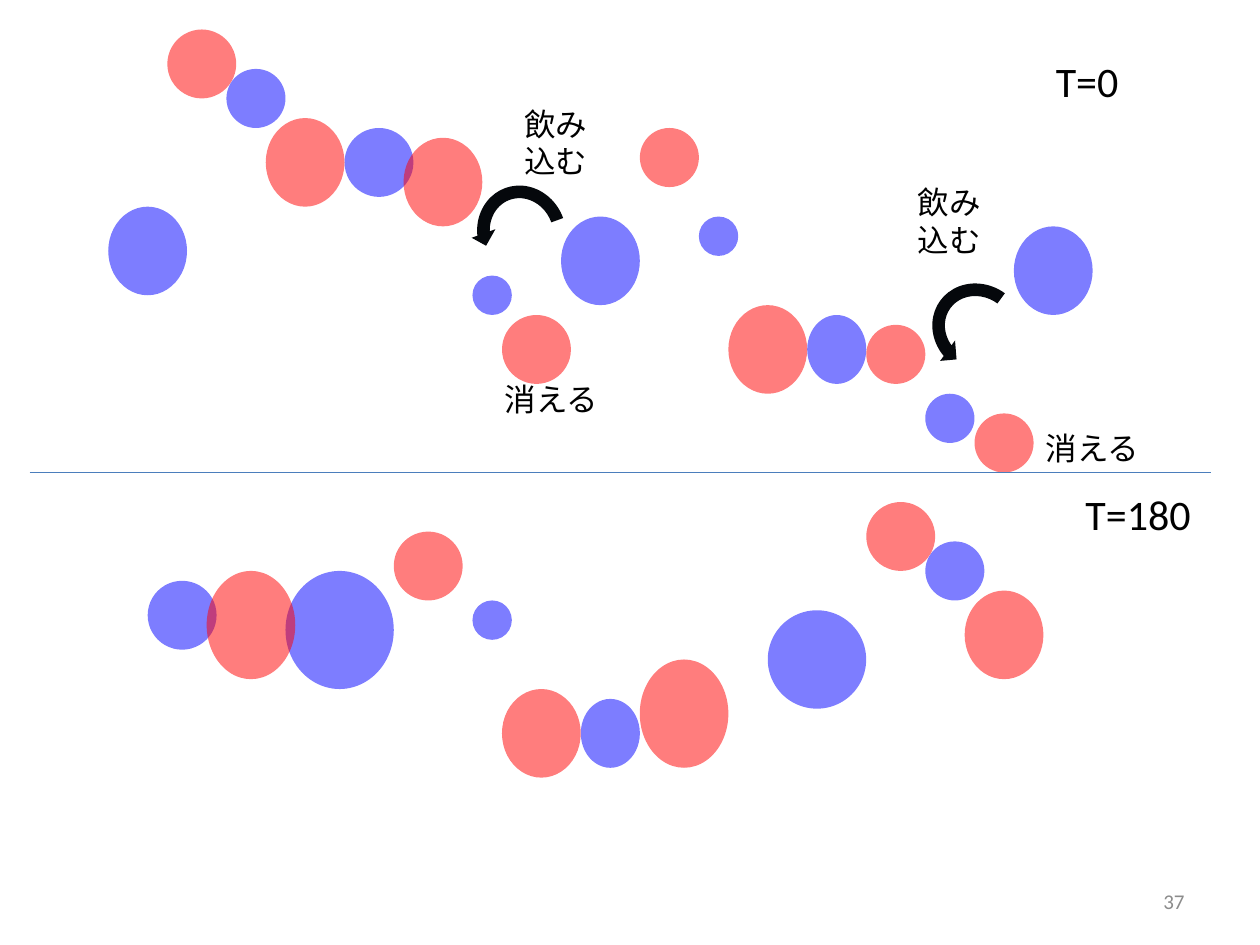
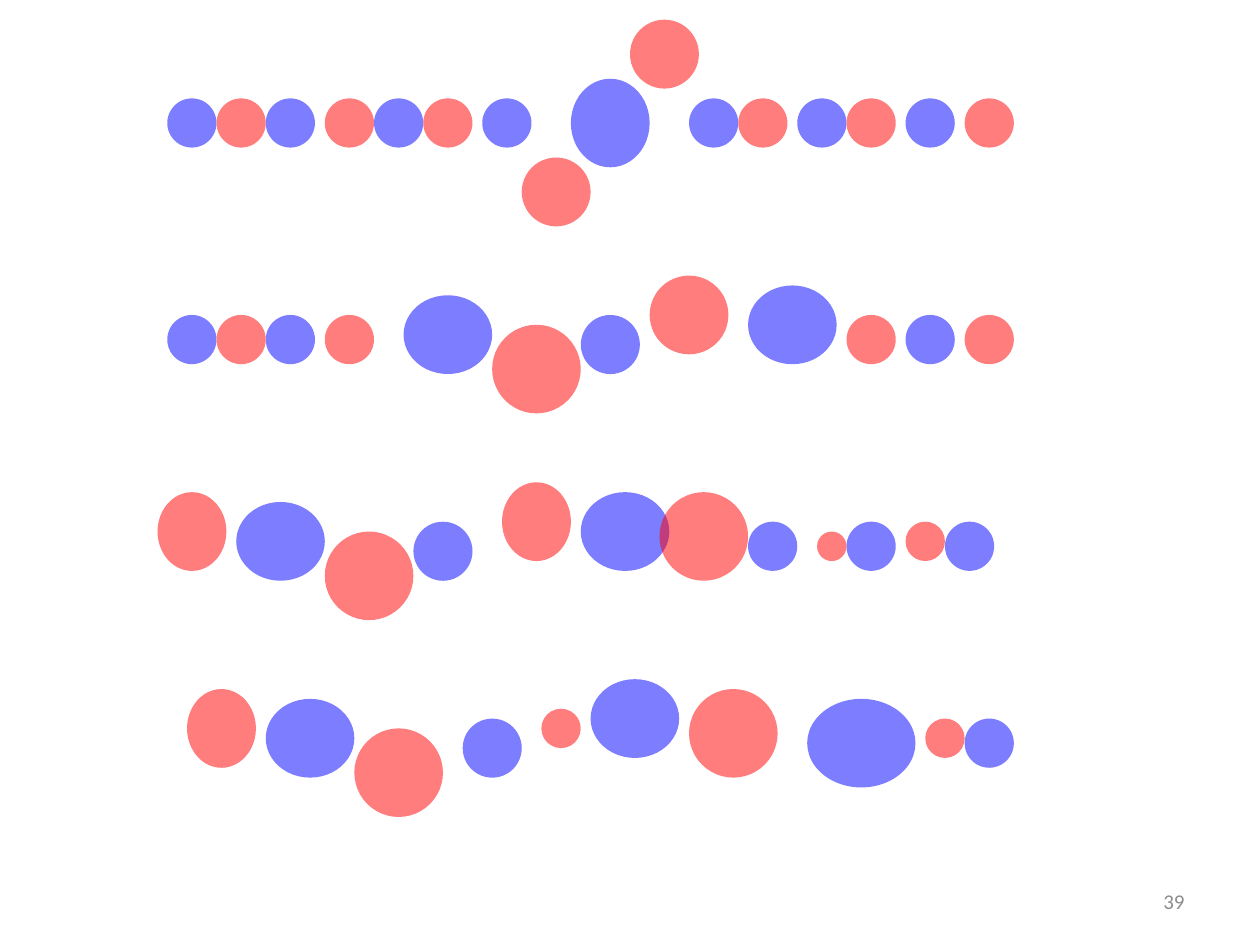
from pptx import Presentation
from pptx.dml.color import RGBColor
from pptx.enum.shapes import MSO_CONNECTOR, MSO_SHAPE
from pptx.enum.text import MSO_ANCHOR, PP_ALIGN
from pptx.oxml.ns import qn
from pptx.util import Pt
from lxml.etree import SubElement

BLUE = RGBColor(0x00, 0x00, 0xFF)
RED = RGBColor(0xFF, 0x00, 0x00)
BLACK = RGBColor(0x00, 0x00, 0x00)
ARROW_BLACK = RGBColor(0x05, 0x08, 0x0C)
DIVIDER_BLUE = RGBColor(0x4B, 0x7E, 0xBC)
NUMBER_GRAY = RGBColor(0x8C, 0x8C, 0x8C)
FONT = "Calibri"
OPACITY = "51000"
BLANK_LAYOUT = 6


def grid(steps):
    return Pt(steps * 45 / 8)


def equal_dots(top, lefts, size=5):
    return [(left, top, size, size) for left in lefts]


class Deck:
    def __init__(self):
        self.presentation = Presentation()
        self.presentation.slide_width = Pt(720)
        self.presentation.slide_height = Pt(540)
        self.slide = None

    def add_slide(self, number):
        layout = self.presentation.slide_layouts[BLANK_LAYOUT]
        self.slide = self.presentation.slides.add_slide(layout)
        box = (Pt(516), Pt(500.5), Pt(168), Pt(28.75))
        frame = self.text(number, box, 12, NUMBER_GRAY)
        frame.vertical_anchor = MSO_ANCHOR.MIDDLE
        frame.paragraphs[0].alignment = PP_ALIGN.RIGHT

    def text(self, words, box, size, color=BLACK, wrap=True):
        frame = self.slide.shapes.add_textbox(*box).text_frame
        frame.word_wrap = wrap
        paragraph = frame.paragraphs[0]
        paragraph.text = words
        paragraph.font.name = FONT
        paragraph.font.size = Pt(size)
        paragraph.font.color.rgb = color
        return frame

    def label(self, words, left, top, width, height, size=18, wrap=True):
        box = (grid(left), grid(top), grid(width), Pt(height))
        self.text(words, box, size, wrap=wrap)

    def filled_shape(self, kind, box, color):
        shape = self.slide.shapes.add_shape(kind, *box)
        shape.shadow.inherit = False
        shape.fill.solid()
        shape.fill.fore_color.rgb = color
        shape.line.fill.background()
        return shape

    def circles(self, color, boxes):
        for box in boxes:
            shape = self.filled_shape(MSO_SHAPE.OVAL, map(grid, box), color)
            solid = shape.element.spPr.find(qn("a:solidFill"))
            SubElement(solid[0], qn("a:alpha"), val=OPACITY)

    def swallow_arrow(self, left, top, rotation):
        box = (Pt(left), Pt(top), Pt(57.6), Pt(61.9))
        shape = self.filled_shape(MSO_SHAPE.CIRCULAR_ARROW, box, ARROW_BLACK)
        shape.rotation = rotation
        shape.element.spPr.find(qn("a:xfrm")).set("flipH", "1")

    def divider(self, left, right, top):
        line = self.slide.shapes.add_connector(
            MSO_CONNECTOR.STRAIGHT, grid(left), grid(top), grid(right), grid(top))
        line.line.color.rgb = DIVIDER_BLUE
        line.line.width = Pt(0.75)
        SubElement(line.element.spPr, qn("a:effectLst"))


def build_time_comparison(deck):
    deck.add_slide("37")
    deck.circles(BLUE, [
        (11, 21, 8, 9), (23, 7, 6, 6), (35, 13, 7, 7), (48, 28, 4, 4), (57, 22, 8, 9),
        (71, 22, 4, 4), (82, 32, 6, 7), (94, 40, 5, 5), (103, 23, 8, 9)])
    deck.circles(RED, [
        (41, 14, 8, 9), (17, 3, 7, 7), (27, 12, 8, 9), (51, 32, 7, 7), (65, 13, 6, 6),
        (74, 31, 8, 9), (88, 33, 6, 6), (99, 42, 6, 6)])
    deck.circles(BLUE, [
        (94, 55, 6, 6), (15, 59, 7, 7), (29, 58, 11, 12), (48, 61, 4, 4),
        (59, 71, 6, 7), (78, 62, 10, 10)])
    deck.circles(RED, [
        (21, 58, 9, 11), (88, 51, 7, 7), (98, 60, 8, 9), (40, 54, 7, 7),
        (51, 70, 8, 9), (65, 67, 9, 11)])
    deck.swallow_arrow(269.3, 102.2, 340.2)
    deck.swallow_arrow(530.6, 157, 306.1)
    deck.divider(3, 123, 48)
    deck.label("T=0", 106, 5, 9, 36, size=24, wrap=False)
    deck.label("T=180", 109, 49, 15, 36, size=24, wrap=False)
    for left, top in [(92, 18), (52, 10)]:
        deck.label("飲み込む", left, top, 10, 51)
    for left, top in [(50, 38), (105, 43)]:
        deck.label("消える", left, top, 14, 29)


def build_circle_rows(deck):
    deck.add_slide("39")
    deck.circles(BLUE, equal_dots(10, [17, 27, 38, 49, 70, 81, 92]) + [(58, 8, 8, 9)])
    deck.circles(RED, equal_dots(10, [22, 33, 43, 75, 86, 98])
                 + equal_dots(16, [53], 7) + equal_dots(2, [64], 7))
    deck.circles(BLUE, equal_dots(32, [17, 27, 92])
                 + [(41, 30, 9, 8), (59, 32, 6, 6), (76, 29, 9, 8)])
    deck.circles(RED, equal_dots(32, [22, 33, 86, 98]) + [(50, 33, 9, 9), (66, 28, 8, 8)])
    deck.circles(BLUE, equal_dots(53, [76, 86, 96])
                 + [(24, 51, 9, 8), (42, 53, 6, 6), (59, 50, 9, 8)])
    deck.circles(RED, [
        (92, 53, 4, 4), (16, 50, 7, 8), (33, 54, 9, 9), (51, 49, 7, 8),
        (67, 50, 9, 9), (83, 54, 3, 3)])
    deck.circles(BLUE, [
        (98, 73, 5, 5), (27, 71, 9, 8), (47, 73, 6, 6), (60, 69, 9, 8), (82, 71, 11, 9)])
    deck.circles(RED, [
        (94, 73, 4, 4), (19, 70, 7, 8), (36, 74, 9, 9), (55, 72, 4, 4), (70, 70, 9, 9)])


def main():
    deck = Deck()
    build_time_comparison(deck)
    build_circle_rows(deck)
    deck.presentation.save("out.pptx")


if __name__ == "__main__":
    main()
